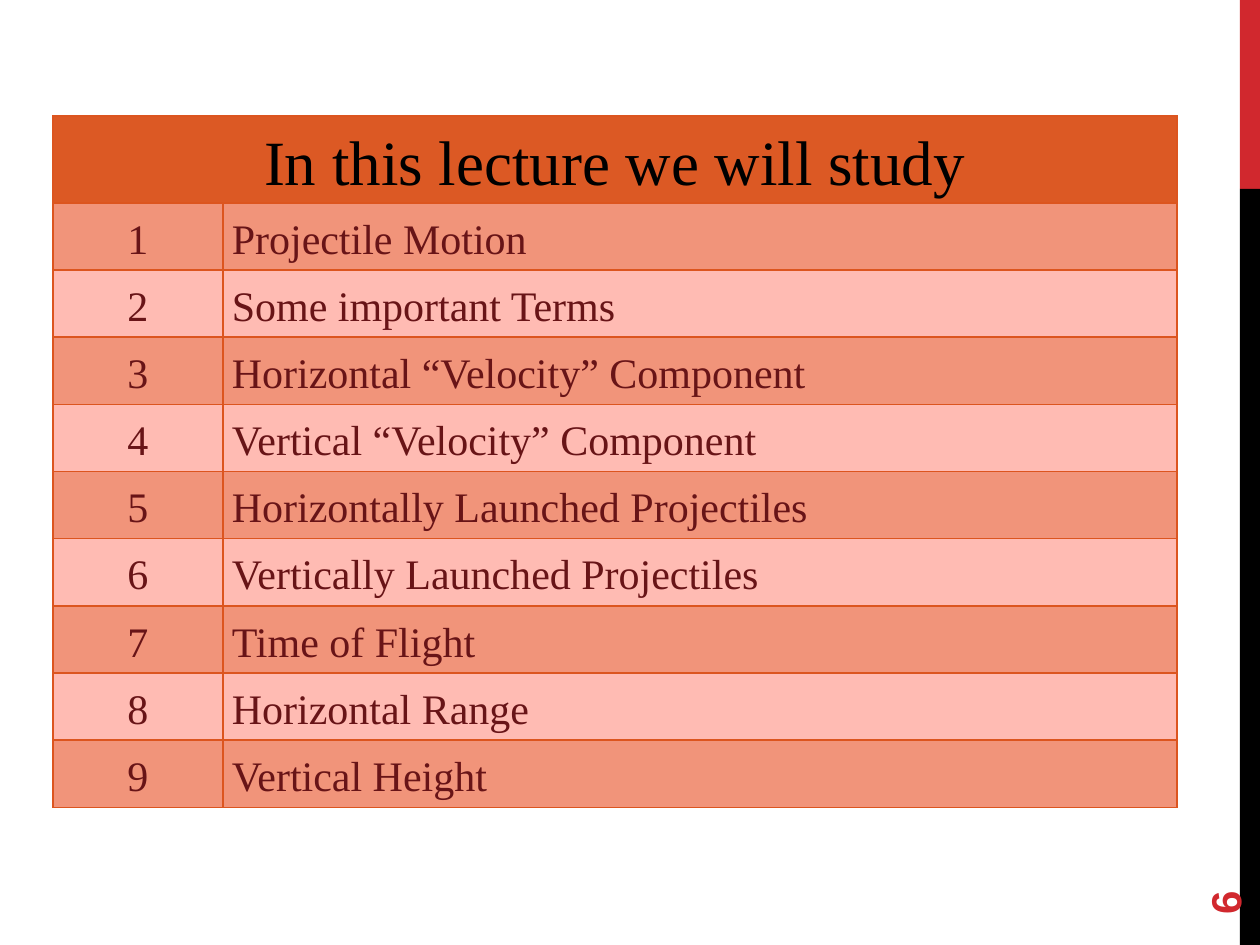
from lxml import etree
from pptx import Presentation
from pptx.dml.color import RGBColor
from pptx.enum.shapes import MSO_SHAPE as Shape
from pptx.enum.text import MSO_ANCHOR as Anchor, PP_ALIGN as Align
from pptx.oxml.ns import qn
from pptx.util import Inches, Pt

# Content
HEADING = "In this lecture we will study"
TOPICS = [
    "Projectile Motion",
    "Some important Terms",
    "Horizontal “Velocity” Component",
    "Vertical “Velocity” Component",
    "Horizontally Launched Projectiles",
    "Vertically Launched Projectiles",
    "Time of Flight",
    "Horizontal Range",
    "Vertical Height",
]
PAGE_NUMBER = "6"
COLORS = {
    "red": "D1282E", "black": "000000", "header": "DC5924", "border": "DC551F",
    "odd": "F1947A", "even": "FFBBB3", "topic": "681417",
}
SIDE_BARS = [("red", 0, 1.5), ("black", 1.5, 6)]  # color, top, height
COLUMNS = [1.35, 7.57]
HEADER_HEIGHT, TABLE_HEIGHT = 0.63, 5.43


def rgb(name):
    return RGBColor.from_string(COLORS[name])


def add_borders(cell, color, width):
    properties = cell._tc.get_or_add_tcPr()
    for side in ("a:lnL", "a:lnR", "a:lnT", "a:lnB"):
        line = etree.SubElement(properties, qn(side), w=str(Pt(width)))
        fill = etree.SubElement(line, qn("a:solidFill"))
        etree.SubElement(fill, qn("a:srgbClr"), val=COLORS[color])


def format_font(font, name, size, color, bold=False):
    font.name, font.size, font.bold = name, Pt(size), bold
    font.color.rgb = rgb(color)


def fill_cell(cell, text, fill, size, color, align):
    add_borders(cell, "border", 1)
    cell.fill.solid()
    cell.fill.fore_color.rgb = rgb(fill)
    cell.margin_left = cell.margin_right = Inches(0.07)
    cell.margin_top = cell.margin_bottom = 0
    cell.vertical_anchor = Anchor.MIDDLE
    para = cell.text_frame.paragraphs[0]
    para.text = text
    para.alignment = align
    para.line_spacing = 1.15
    for span in para.runs:
        format_font(span.font, "Times New Roman", size, color)


deck = Presentation()
deck.slide_width, deck.slide_height = Inches(10), Inches(7.5)
page = deck.slides.add_slide(deck.slide_layouts[6])

# Side bars
for color, top, height in SIDE_BARS:
    bar = page.shapes.add_shape(
        Shape.RECTANGLE, Inches(9.84), Inches(top), Inches(0.16), Inches(height))
    bar.shadow.inherit = False
    bar.fill.solid()
    bar.fill.fore_color.rgb = rgb(color)
    bar.line.fill.background()

# Page number
box = page.shapes.add_textbox(Inches(9), Inches(6.44), Inches(1.44), Inches(0.4))
box.rotation = 270
box.text_frame.word_wrap = True
box.text_frame.vertical_anchor = Anchor.MIDDLE
box.text_frame.text = PAGE_NUMBER
format_font(box.text_frame.paragraphs[0].runs[0].font, "Arial", 24, "red", bold=True)

# Topic table
table = page.shapes.add_table(
    len(TOPICS) + 1, len(COLUMNS), Inches(0.42), Inches(0.92),
    Inches(sum(COLUMNS)), Inches(TABLE_HEIGHT)).table
for column, width in zip(table.columns, COLUMNS):
    column.width = Inches(width)
row_height = (TABLE_HEIGHT - HEADER_HEIGHT) / len(TOPICS)
for index, row in enumerate(table.rows):
    row.height = Inches(row_height if index else HEADER_HEIGHT)

table.cell(0, 0).merge(table.cell(0, 1))
fill_cell(table.cell(0, 0), HEADING, "header", 36, "black", Align.CENTER)
fill_cell(table.cell(0, 1), "", "header", 36, "black", Align.CENTER)
for number, topic in enumerate(TOPICS, start=1):
    band = "odd" if number % 2 else "even"
    fill_cell(table.cell(number, 0), str(number), band, 24, "topic", Align.CENTER)
    fill_cell(table.cell(number, 1), topic, band, 24, "topic", Align.LEFT)

deck.save("out.pptx")
